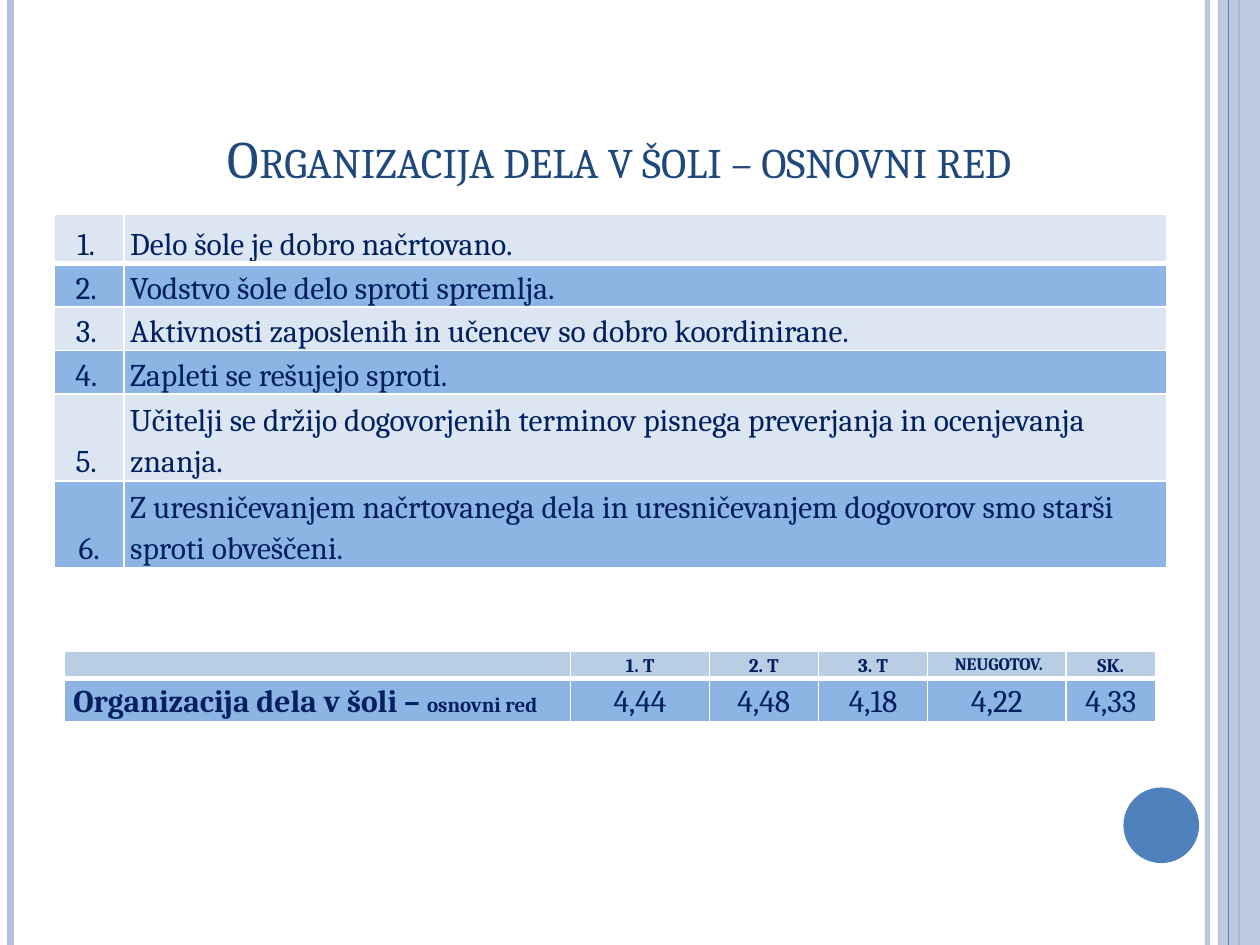
"""Build the slide on how school work is organised."""
from dataclasses import dataclass

from lxml.etree import SubElement as Sub
from pptx import Presentation as Deck
from pptx.dml.color import RGBColor as Rgb
from pptx.enum.shapes import MSO_CONNECTOR as Link, MSO_SHAPE as Kind
from pptx.enum.text import MSO_ANCHOR as Anchor, PP_ALIGN as Align
from pptx.oxml.ns import qn
from pptx.util import Pt


@dataclass(frozen=True)
class Theme:
    """Hold the colours and type sizes."""
    face: str = "Cambria"
    title: str = "1F497D"
    ink: str = "002060"
    rail: str = "B3C1DB"
    blue: str = "4F81BD"
    pale: str = "DCE6F2"
    mid: str = "8EB4E3"
    head: str = "B9CDE5"
    rule: str = "FFFFFF"
    big: float = 30
    body: float = 18
    note: float = 12
    small: float = 11
    tiny: float = 10


LOOK = Theme()
TALL = 540

ITEMS = [
    ("1. ", "Delo šole je dobro načrtovano."),
    ("2. ", "Vodstvo šole delo sproti spremlja."),
    ("3. ", "Aktivnosti zaposlenih in učencev so dobro koordinirane."),
    ("4. ", "Zapleti se rešujejo sproti."),
    ("5. ", "Učitelji se držijo dogovorjenih terminov pisnega preverjanja "
            "in ocenjevanja znanja."),
    ("6.", "Z uresničevanjem načrtovanega dela in uresničevanjem dogovorov "
           "smo starši sproti obveščeni."),
]
HEADS = ["", "1. T", "2. T", "3. T", "\u00a0NEUGOTOV.", "SK."]
MEANS = ["Organizacija dela v šoli – ", "4,44", "4,48", "4,18", "4,22", "4,33"]


def fade(fill, pct):
    """Set the opacity of a solid fill or line in percent."""
    tone = fill._xPr.find(qn("a:solidFill"))[0]
    Sub(tone, qn("a:alpha"), val=str(pct * 1000))


def rail(slide, x, tone, width):
    """Draw a line down the full height of the slide."""
    line = slide.shapes.add_connector(Link.STRAIGHT, Pt(x), 0, Pt(x), Pt(TALL))
    line.line.color.rgb = Rgb.from_string(tone)
    line.line.width = Pt(width)
    Sub(line._element.spPr, qn("a:effectLst"))
    return line


def solid(slide, kind, box, tone):
    """Draw a plain filled shape."""
    shape = slide.shapes.add_shape(kind, *map(Pt, box))
    shape.shadow.inherit = False
    shape.fill.solid()
    shape.fill.fore_color.rgb = Rgb.from_string(tone)
    shape.line.fill.background()
    return shape


def style(run, size, tone, bold=False):
    """Set the font of a run."""
    font = run.font
    font.name, font.size, font.bold = LOOK.face, Pt(size), bold
    font.color.rgb = Rgb.from_string(tone)


def title(slide, text, box):
    """Add the title in small capitals."""
    frame = slide.shapes.add_textbox(*map(Pt, box)).text_frame
    frame.word_wrap = True
    frame.vertical_anchor = Anchor.BOTTOM
    frame.text = text
    para = frame.paragraphs[0]
    para.alignment = Align.CENTER
    style(para.runs[0], LOOK.big, LOOK.title)
    para.runs[0].font._element.set("cap", "small")


def edges(cell, top, base):
    """Draw the four borders of a cell."""
    props = cell._tc.get_or_add_tcPr()
    for side, width in zip("LRTB", (1, 1, top, base)):
        line = Sub(props, qn(f"a:ln{side}"), w=str(Pt(width)))
        fill = Sub(line, qn("a:solidFill"))
        Sub(fill, qn("a:srgbClr"), val=LOOK.rule)


def put(cell, text, size, align, bold=False):
    """Write one line of text into a cell."""
    cell.text_frame.text = text
    para = cell.text_frame.paragraphs[0]
    para.alignment, para.line_spacing = align, 1.15
    for run in para.runs:
        style(run, size, LOOK.ink, bold)
    if not text:
        Sub(para._p, qn("a:endParaRPr"), sz=str(round(size * 100)))
    return para


def grid(slide, spot, cols, rows, tones, inset, anchor):
    """Add an empty table with a thick rule under its first row."""
    size = sum(cols), sum(rows)
    table = slide.shapes.add_table(
        len(rows), len(cols), *map(Pt, (*spot, *size))).table
    for col, width in zip(table.columns, cols):
        col.width = Pt(width)
    for r, (row, height) in enumerate(zip(table.rows, rows)):
        row.height = Pt(height)
        for cell in row.cells:
            edges(cell, 3 if r == 1 else 1, 3 if r == 0 else 1)
            cell.fill.solid()
            cell.fill.fore_color.rgb = Rgb.from_string(tones[r % 2])
            cell.margin_left = cell.margin_right = Pt(inset)
            cell.margin_top = cell.margin_bottom = 0
            cell.vertical_anchor = anchor
    return table


def frame(slide):
    """Draw the rails, side band and disc around the content."""
    rim = rail(slide, 690, LOOK.rail, 3)
    fade(rim.line.fill, 93)
    rail(slide, 6, LOOK.rail, 4.5)
    band = solid(slide, Kind.RECTANGLE, (696, 0, 24, TALL), LOOK.rail)
    fade(band.fill, 87)
    core = rail(slide, 708, LOOK.blue, 1.5)
    core.begin_connect(band, 0)
    core.end_connect(band, 2)
    band._element.addprevious(core._element)
    rail(slide, 702, LOOK.blue, 0.75)
    solid(slide, Kind.OVAL, (642, 450, 43.2, 43.2), LOOK.blue)


def claims(slide):
    """Add the table of numbered statements."""
    rows = [28, 23.8, 23.8, 23.8, 47.6, 47.6]
    table = grid(slide, (31.2, 122.6), (39.6, 596.2), rows,
                 (LOOK.pale, LOOK.mid), 3.6, Anchor.BOTTOM)
    for r, (mark, text) in enumerate(ITEMS):
        put(table.cell(r, 0), mark, LOOK.body, Align.CENTER)
        put(table.cell(r, 1), text, LOOK.body, Align.LEFT)


def scores(slide):
    """Add the table of mean scores."""
    cols = (289.2, 79.2, 62.4, 62.4, 79.2, 51)
    table = grid(slide, (36.9, 372.4), cols, (14.4, 23.5),
                 (LOOK.head, LOOK.mid), 5, Anchor.TOP)
    for c, (head, mean) in enumerate(zip(HEADS, MEANS)):
        size = LOOK.tiny if "NEUGOTOV" in head else LOOK.small
        put(table.cell(0, c), head, size, Align.CENTER, True)
        side = Align.CENTER if c else Align.JUSTIFY
        para = put(table.cell(1, c), mean, LOOK.body, side, c == 0)
        if c == 0:
            tail = para.add_run()
            tail.text = "osnovni red"
            style(tail, LOOK.note, LOOK.ink, True)


def main():
    """Build and save the slide."""
    deck = Deck()
    deck.slide_width, deck.slide_height = Pt(720), Pt(TALL)
    slide = deck.slides.add_slide(deck.slide_layouts[6])
    frame(slide)
    title(slide, "Organizacija dela v šoli – osnovni red",
          (36, 21.6, 636, 90))
    claims(slide)
    scores(slide)
    deck.save("out.pptx")


if __name__ == "__main__":
    main()
